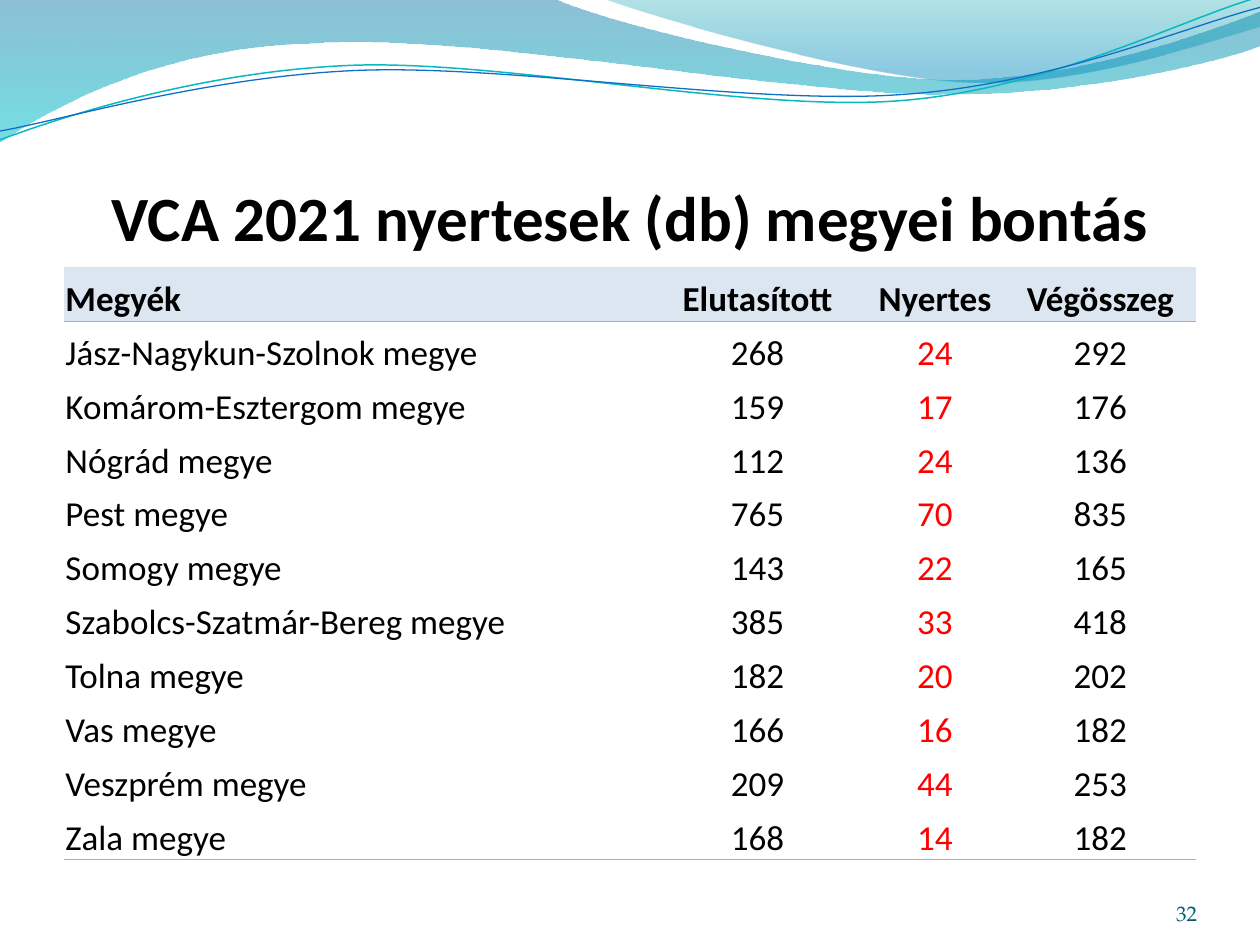
import math

import pptx
import pptx.dml.color
import pptx.enum.text
import pptx.oxml
import pptx.oxml.ns
import pptx.util
from lxml import etree

Pt = pptx.util.Pt
RGBColor = pptx.dml.color.RGBColor
ALIGN = pptx.enum.text.PP_ALIGN
BOTTOM = pptx.enum.text.MSO_ANCHOR.BOTTOM
qn = pptx.oxml.ns.qn

BLACK = RGBColor(0x00, 0x00, 0x00)
RED = RGBColor(0xFF, 0x00, 0x00)
HEADER_FILL = RGBColor(0xDC, 0xE6, 0xF1)
RULE = RGBColor(0x95, 0xB3, 0xD7)
NUMBER_COLOR = RGBColor(0x04, 0x5D, 0x75)
DEEP_BLUE = RGBColor(0x00, 0x74, 0xA1)
CYAN = RGBColor(0x00, 0xC6, 0xCF)
TEAL = RGBColor(0x00, 0xA1, 0xA9)
SKY = RGBColor(0x00, 0x8B, 0xBF)
LINE_TEAL = RGBColor(0x0A, 0xB8, 0xBF)
LINE_BLUE = RGBColor(0x0F, 0x6F, 0xC6)

# Content
TITLE = "VCA 2021 nyertesek (db) megyei bontás"
PAGE_NUMBER = "32"
ROWS = [
    ("Megyék", "Elutasított", "Nyertes", "Végösszeg"),
    ("Jász-Nagykun-Szolnok megye", "268", "24", "292"),
    ("Komárom-Esztergom megye", "159", "17", "176"),
    ("Nógrád megye", "112", "24", "136"),
    ("Pest megye", "765", "70", "835"),
    ("Somogy megye", "143", "22", "165"),
    ("Szabolcs-Szatmár-Bereg megye", "385", "33", "418"),
    ("Tolna megye", "182", "20", "202"),
    ("Vas megye", "166", "16", "182"),
    ("Veszprém megye", "209", "44", "253"),
    ("Zala megye", "168", "14", "182"),
]
COLUMN_WIDTHS = [334.8, 122.9, 79.8, 109.2]
ROW_HEIGHT = 30.79
RULED_EDGES = (1, len(ROWS))
WINNER_COLUMN = 2
NO_STYLE = "{2D5ABB26-0587-4C30-8999-92F81FD0307C}"

# Waves: a start point, then segments of one point (line) or three (curve)
# Gradient stops: position, colour, opacity in percent
FILLED_WAVES = [
    ((0, 0),
     [((316.8, -0.7),),
      ((342.7, 12.2), (478.1, 45.4), (545.8, 45.4)),
      ((614.2, 45.4), (689.8, 18.7), (720, 6.5)),
      ((720.7, 25.9),),
      ((707.8, 31.7), (626.4, 54.7), (537.1, 54)),
      ((447.8, 54), (275, 20.2), (185, 24.5)),
      ((92.9, 25.9), (33.1, 59.8), (-0.7, 81.4))],
     [(0, DEEP_BLUE, 45), (1, CYAN, 55)]),
    ((344.9, -0.7),
     [((366.5, 7.9), (491, 44.6), (553.7, 46.8)),
      ((616.3, 49.7), (691.9, 23), (720, 15.1)),
      ((720, 0),)],
     [(0, TEAL, 30), (0.8, SKY, 45)]),
]
LINE_WAVES = [
    ((0, 79.9),
     [((34.6, 67), (113.8, 41), (199.4, 37.4)),
      ((284.4, 33.8), (427, 64.1), (513.4, 57.6)),
      ((599.8, 51.1), (675.4, 10.8), (718.6, -1.4))],
     LINE_TEAL, 0.85),
    ((0, 74.9),
     [((33.8, 69.1), (118.1, 43.9), (203.8, 40.3)),
      ((290.2, 36.7), (429.8, 60.5), (516.2, 54)),
      ((601.9, 48.2), (677.5, 15.1), (720, 4.3))],
     LINE_BLUE, 0.75),
]
LINE_TILT = 357.3


def turn(point, degrees):
    angle = math.radians(degrees)
    x, y = point
    return (x * math.cos(angle) - y * math.sin(angle),
            x * math.sin(angle) + y * math.cos(angle))


def untilt(points, degrees):
    """Points that land on the given ones once their shape is rotated."""
    level = [turn(point, -degrees) for point in points]
    center = tuple((min(axis) + max(axis)) / 2 for axis in zip(*level))
    target = turn(center, degrees)
    return [tuple(v + t - c for v, t, c in zip(point, target, center))
            for point in level]


def add_wave(slide, start, segments, close=False, tilt=0):
    points = [start] + [point for segment in segments for point in segment]
    vertices = [(Pt(x), Pt(y)) for x, y in untilt(points, tilt)]
    builder = slide.shapes.build_freeform(*vertices[0], scale=1.0)
    builder.add_line_segments(vertices[1:], close=close)
    shape = builder.convert_to_shape()
    shape.rotation = tilt
    shape.shadow.inherit = False
    # Join each group of three points into one curve
    steps = iter(shape._element.findall(".//" + qn("a:lnTo")))
    for segment in segments:
        group = [next(steps) for point in segment]
        if len(group) == 3:
            curve = etree.Element(qn("a:cubicBezTo"))
            group[0].addprevious(curve)
            for step in group:
                curve.append(step[0])
                step.getparent().remove(step)
    return shape


def fill_gradient(shape, stops):
    shape.line.fill.background()
    shape.fill.gradient()
    shape.fill.gradient_angle = 270
    elements = shape._element.spPr.findall(".//" + qn("a:gs"))
    for stop, element, (position, color, opacity) in zip(
            shape.fill.gradient_stops, elements, stops):
        stop.position = position
        stop.color.rgb = color
        alpha = etree.SubElement(element.find(qn("a:srgbClr")), qn("a:alpha"))
        alpha.set("val", str(opacity * 1000))


def write(frame, text, size, font, color, bold=False, align=ALIGN.LEFT):
    paragraph = frame.paragraphs[0]
    paragraph.alignment = align
    run = paragraph.add_run()
    run.text = text
    run.font.size = Pt(size)
    run.font.name = font
    run.font.bold = bold
    run.font.color.rgb = color


def add_text(slide, left, top, width, height, top_inset, *args, **kwargs):
    box = slide.shapes.add_textbox(Pt(left), Pt(top), Pt(width), Pt(height))
    frame = box.text_frame
    frame.word_wrap = True
    frame.vertical_anchor = BOTTOM
    frame.margin_left = frame.margin_right = frame.margin_bottom = 0
    frame.margin_top = Pt(top_inset)
    write(frame, *args, **kwargs)


def add_borders(cell, row):
    for tag, edge in (("lnB", row + 1), ("lnT", row)):
        paint = "<a:noFill/>"
        if edge in RULED_EDGES:
            paint = f'<a:solidFill><a:srgbClr val="{RULE}"/></a:solidFill>'
        cell._tc.get_or_add_tcPr().insert(0, pptx.oxml.parse_xml(
            f'<a:{tag} {pptx.oxml.ns.nsdecls("a")} w="{Pt(0.5)}">{paint}</a:{tag}>'))


def add_county_table(slide):
    table = slide.shapes.add_table(
        len(ROWS), len(COLUMN_WIDTHS), Pt(36.7), Pt(152.6),
        Pt(sum(COLUMN_WIDTHS)), Pt(ROW_HEIGHT * len(ROWS))).table
    table.first_row = table.horz_banding = False
    table._tbl.tblPr.find(qn("a:tableStyleId")).text = NO_STYLE
    for column, width in zip(table.columns, COLUMN_WIDTHS):
        column.width = Pt(width)
    for r, values in enumerate(ROWS):
        table.rows[r].height = Pt(ROW_HEIGHT)
        header = r == 0
        for c, value in enumerate(values):
            cell = table.cell(r, c)
            cell.vertical_anchor = BOTTOM
            cell.margin_left = cell.margin_right = cell.margin_top = Pt(0.72)
            cell.margin_bottom = 0
            if header:
                cell.fill.solid()
                cell.fill.fore_color.rgb = HEADER_FILL
            else:
                cell.fill.background()
            add_borders(cell, r)
            color = RED if c == WINNER_COLUMN and not header else BLACK
            write(cell.text_frame, value, 20, "Calibri", color, bold=header,
                  align=ALIGN.CENTER if c else ALIGN.LEFT)


presentation = pptx.Presentation()
presentation.slide_width, presentation.slide_height = Pt(720), Pt(540)
slide = presentation.slides.add_slide(presentation.slide_layouts[6])

# Wave decoration
for start, segments, stops in FILLED_WAVES:
    fill_gradient(add_wave(slide, start, segments, close=True), stops)
for start, segments, color, width in LINE_WAVES:
    wave = add_wave(slide, start, segments, tilt=LINE_TILT)
    wave.fill.background()
    wave.line.color.rgb = color
    wave.line.width = Pt(width)

# Title, table and page number
add_text(slide, 36, 55.4, 648, 90, 3.6, TITLE, 36, "Calibri", BLACK,
         bold=True, align=ALIGN.CENTER)
add_county_table(slide)
add_text(slide, 624, 500.4, 60, 28.8, 0, PAGE_NUMBER, 12,
         "TeX Gyre Pagella", NUMBER_COLOR, align=ALIGN.RIGHT)
presentation.save("out.pptx")
